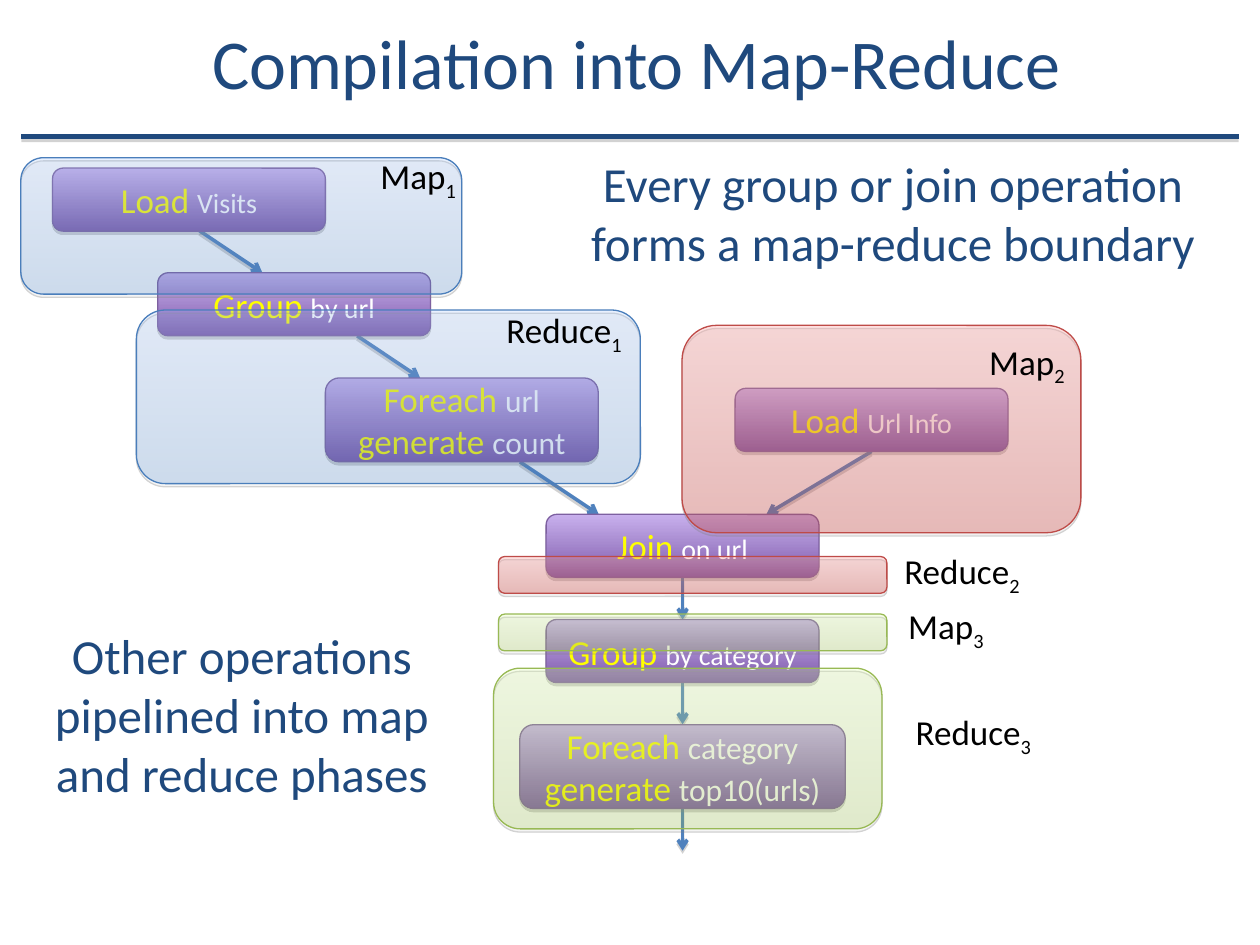
"""Build a slide on how a query plan compiles into map-reduce stages."""
from lxml import etree
from pptx import Presentation
from pptx import util as u
from pptx.dml.color import RGBColor
from pptx.enum import shapes, text
from pptx.oxml.ns import qn


def hue(code):
    return RGBColor.from_string(code)


def add(para, words, size, tone, base=0):
    run = para.add_run()
    run.text = words
    run.font.name = "Calibri"
    run.font.size = u.Pt(size)
    run.font.color.rgb = hue(tone)
    if base:
        run.font._element.set("baseline", str(base * 1000))


NAVY, BLUE, GOLD, WHITE, BLACK = "1F497D", "4F81BD", "FFFF00", "FFFFFF", "000000"
deck = Presentation()
deck.slide_width, deck.slide_height = u.Cm(25.4), u.Cm(19.05)
slide = deck.slides.add_slide(deck.slide_layouts[5])
parts = slide.shapes
cast = []

title = parts.title
title.left, title.top, title.width, title.height = [u.Cm(n) for n in (4.02, 0.13, 21.16, 2.21)]
title.text_frame.vertical_anchor = text.MSO_ANCHOR.MIDDLE
para = title.text_frame.paragraphs[0]
para.alignment = text.PP_ALIGN.LEFT
add(para, "Compilation into Map-Reduce", 40, NAVY)

wires = [
    (24.97, 2.75, 0.43, 2.75, NAVY, 3),
    (4.02, 4.65, 5.29, 5.5, BLUE, 2),
    (7.2, 6.77, 8.47, 7.62, BLUE, 2),
    (10.48, 9.31, 12.07, 10.37, BLUE, 2),
    (17.57, 9.1, 15.45, 10.37, BLUE, 2),
    (13.76, 11.65, 13.76, 12.49, BLUE, 2),
    (13.76, 13.76, 13.76, 14.6, BLUE, 2),
    (13.76, 16.3, 13.76, 17.15, BLUE, 2),
]
for *ends, tone, thick in wires:
    wire = parts.add_connector(shapes.MSO_CONNECTOR.STRAIGHT, *[u.Cm(n) for n in ends])
    wire.line.color.rgb = hue(tone)
    wire.line.width = u.Pt(thick)
    if tone == BLUE:
        line = wire._element.spPr.find(qn("a:ln"))
        etree.SubElement(line, qn("a:tailEnd"), type="arrow")
    cast.append(wire)

step = ("C8B0ED", "7F5BAB", "7D60A0", 100)
blue = ("9BC1FF", "3F80CD", "4A7EBB", 21)
red = ("FF9A99", "D1403C", "BE4B48", 31)
green = ("DCFFA0", "A0CA4A", "98B954", 24)
boxes = [
    (1.06, 3.39, 5.5, 1.27, step, 16, [("Load ", "Visits")]),
    (3.18, 5.5, 5.5, 1.27, step, 16, [("Group ", "by url")]),
    (6.56, 7.62, 5.5, 1.69, step, 18, [("Foreach ", "url"), ("generate ", "count")]),
    (14.82, 7.83, 5.5, 1.27, step, 16, [("Load ", "Url Info")]),
    (11.01, 10.37, 5.5, 1.27, step, 16, [("Join ", "on url")]),
    (11.01, 12.49, 5.5, 1.27, step, 16, [("Group ", "by category")]),
    (10.48, 14.61, 6.56, 1.69, step, 18,
     [("Foreach ", "category"), ("generate ", "top10(urls)")]),
    (0.42, 3.18, 8.89, 2.75, blue, 0, []),
    (2.75, 6.25, 10.16, 3.5, blue, 0, []),
    (13.75, 6.56, 8.04, 4.18, red, 0, []),
    (10.05, 11.22, 7.83, 0.74, red, 0, []),
    (10.05, 12.38, 7.83, 0.74, green, 0, []),
    (9.95, 13.47, 7.83, 3.24, green, 0, []),
]
for *spot, (light, dark, edge, alpha), size, rows in boxes:
    box = parts.add_shape(shapes.MSO_SHAPE.ROUNDED_RECTANGLE, *[u.Cm(n) for n in spot])
    box.fill.gradient()
    box.fill.gradient_angle = 270
    for stop, tone, place in zip(box.fill.gradient_stops, (light, dark), (0, 1)):
        stop.color.rgb = hue(tone)
        stop.position = place
    if alpha < 100:
        for tint in box._element.spPr.iter(qn("a:srgbClr")):
            etree.SubElement(tint, qn("a:alpha"), val=str(alpha * 1000))
    box.line.color.rgb = hue(edge)
    box.line.width = u.Pt(0.75)
    frame = box.text_frame
    frame.vertical_anchor = text.MSO_ANCHOR.MIDDLE
    for i, (verb, rest) in enumerate(rows):
        para = frame.add_paragraph() if i else frame.paragraphs[0]
        para.alignment = text.PP_ALIGN.CENTER
        add(para, verb, 20, GOLD)
        add(para, rest, size, WHITE)
    cast.append(box)

for part in cast:
    glow = etree.SubElement(part._element.spPr, qn("a:effectLst"))
    cast_by = etree.SubElement(glow, qn("a:outerShdw"), dist=str(u.Pt(1.8)),
                               dir="5400000", rotWithShape="0")
    tint = etree.SubElement(cast_by, qn("a:srgbClr"), val="808080")
    etree.SubElement(tint, qn("a:alpha"), val="35000")

left, mid = text.PP_ALIGN.LEFT, text.PP_ALIGN.CENTER
notes = [
    (7.42, 3, 2.46, 1.12, left, 20, BLACK, "Map", "1"),
    (9.96, 6.1, 3.2, 1.12, left, 20, BLACK, "Reduce", "1"),
    (19.69, 6.73, 2.46, 1.12, left, 20, BLACK, "Map", "2"),
    (17.98, 10.95, 3.68, 1.12, left, 20, BLACK, "Reduce", "2"),
    (18.06, 12.07, 2.46, 1.12, left, 20, BLACK, "Map", "3"),
    (18.21, 14.2, 3.25, 1.12, left, 20, BLACK, "Reduce", "3"),
    (11.23, 2.97, 13.54, 2.64, mid, 28, NAVY,
     "Every group or join operation forms a map-reduce boundary", ""),
    (0, 12.49, 9.75, 3.84, mid, 28, NAVY,
     "Other operations pipelined into map and reduce phases", ""),
]
for *spot, side, size, tone, words, sub in notes:
    frame = parts.add_textbox(*[u.Cm(n) for n in spot]).text_frame
    frame.word_wrap = True
    para = frame.paragraphs[0]
    para.alignment = side
    add(para, words, size, tone)
    if sub:
        add(para, sub, size, tone, -25)

deck.save("out.pptx")
